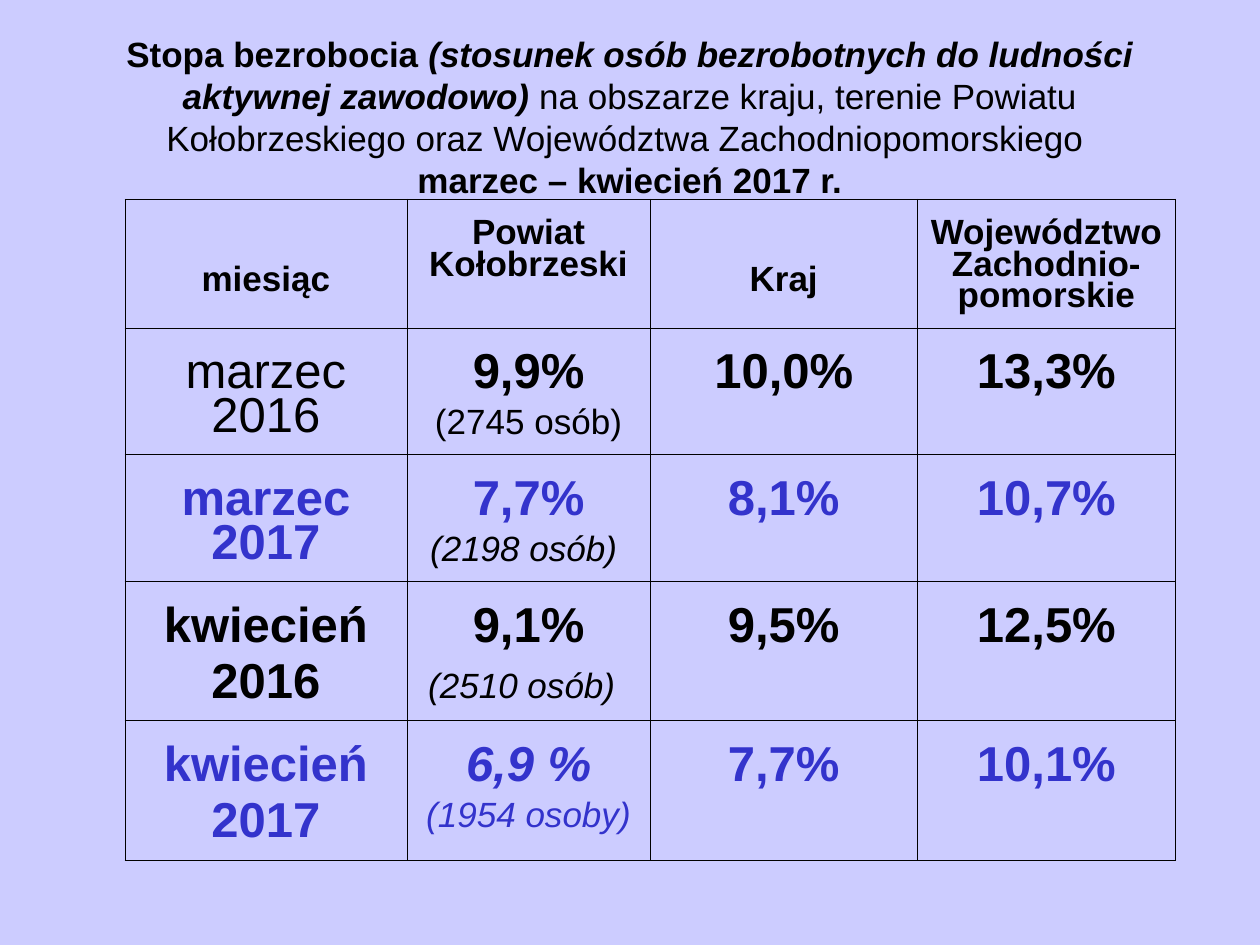
from typing import Any, NamedTuple

from lxml.etree import SubElement
from pptx import Presentation
from pptx.dml.color import RGBColor
from pptx.enum.text import MSO_ANCHOR, PP_ALIGN
from pptx.oxml.ns import qn
from pptx.util import Inches, Pt

BLACK = RGBColor(0x00, 0x00, 0x00)
BLUE = RGBColor(0x33, 0x33, 0xCC)
LILAC = RGBColor(0xCC, 0xCC, 0xFF)
BIG, SMALL = 28, 20
HAIR, EDGE = Pt(0.11), Pt(0.23)
WIDTHS = (2.24, 1.93, 2.12, 2.05)
HEIGHTS = (0.96, 0.96, 0.95, 1.06, 1.05)
BREAK = "\n"


class Run(NamedTuple):
    text: str
    size: int = BIG
    color: RGBColor = BLACK
    bold: bool = True
    italic: bool = False


class Month(NamedTuple):
    name: list[list[Run]]
    local: list[list[Run]]
    nation: str
    region: str
    color: RGBColor


def assign(item: Any, values: dict[str, Any]) -> None:
    for name, value in values.items():
        setattr(item, name, value)


def write(frame: Any, lines: list[list[Run]], form: dict[str, Any]) -> None:
    for index, line in enumerate(lines):
        para = frame.add_paragraph() if index else frame.paragraphs[0]
        assign(para, {"alignment": PP_ALIGN.CENTER, **form})
        for part in line:
            if part.text == BREAK:
                para.add_line_break()
                continue
            run = para.add_run()
            run.text = part.text
            assign(run.font, {"name": "Arial", "size": Pt(part.size),
                              "bold": part.bold, "italic": part.italic})
            run.font.color.rgb = part.color


def border(cell: Any, sides: dict[str, int]) -> None:
    props = cell._tc.get_or_add_tcPr()
    for side, width in sides.items():
        line = SubElement(props, qn(f"a:ln{side}"), w=str(int(width)))
        fill = SubElement(line, qn("a:solidFill"))
        SubElement(fill, qn("a:srgbClr"), val=str(BLACK))


def draw_cell(table: Any, row: int, col: int, lines: list[list[Run]], top: float) -> None:
    cell = table.cell(row, col)
    assign(cell, {"margin_left": Inches(0.1), "margin_right": Inches(0.1),
                  "margin_top": Inches(top), "margin_bottom": Inches(0.05)})
    border(cell, {"L": HAIR if col else EDGE,
                  "R": HAIR if col < len(WIDTHS) - 1 else EDGE,
                  "T": HAIR if row else EDGE, "B": HAIR})
    cell.fill.background()
    write(cell.text_frame, lines,
          {"line_spacing": 0.81, "space_before": Pt(7 if row else 5)})


def draw_title(slide: Any, lines: list[list[Run]]) -> None:
    box = slide.shapes.add_textbox(Inches(0.5), Inches(0.3), Inches(9), Inches(1.25))
    assign(box.text_frame, {"word_wrap": True, "vertical_anchor": MSO_ANCHOR.MIDDLE})
    write(box.text_frame, lines, {})


def draw_table(slide: Any, heads: list[tuple[str, float]], months: list[Month]) -> None:
    frame = slide.shapes.add_table(len(HEIGHTS), len(WIDTHS), Inches(0.99), Inches(1.58),
                                   Inches(sum(WIDTHS)), Inches(sum(HEIGHTS)))
    table = frame.table
    assign(table, {"first_row": False, "horz_banding": False})
    for column, width in zip(table.columns, WIDTHS):
        column.width = Inches(width)
    for row, height in zip(table.rows, HEIGHTS):
        row.height = Inches(height)
    for col, (text, top) in enumerate(heads):
        draw_cell(table, 0, col, [[Run(text, SMALL)]], top)
    for row, month in enumerate(months, 1):
        rates = [[[Run(text, color=month.color)]] for text in (month.nation, month.region)]
        for col, lines in enumerate([month.name, month.local, *rates]):
            draw_cell(table, row, col, lines, 0.2)


TITLE = [[
    Run("Stopa bezrobocia ", SMALL),
    Run("(stosunek osób bezrobotnych do ludności aktywnej zawodowo)", SMALL, italic=True),
    Run(" na obszarze kraju, terenie Powiatu Kołobrzeskiego oraz "
        "Województwa Zachodniopomorskiego ", SMALL, bold=False),
    Run(BREAK),
    Run("marzec – kwiecień 2017 r.", SMALL),
]]
HEADS = [("miesiąc", 0.53), ("Powiat Kołobrzeski", 0.16), ("Kraj", 0.53),
         ("Województwo Zachodnio-pomorskie", 0.16)]
MONTHS = [
    Month([[Run("marzec 2016", bold=False)]],
          [[Run("9,9%")], [Run("(2745 osób)", SMALL, bold=False)]],
          "10,0%", "13,3%", BLACK),
    Month([[Run("marzec 2017", color=BLUE)]],
          [[Run("7,7%", color=BLUE)], [Run("(2198 osób) ", SMALL, BLACK, False, True)]],
          "8,1%", "10,7%", BLUE),
    Month([[Run("kwiecień")], [Run("2016")]],
          [[Run("9,1%")],
           [Run("(2510 osób)", SMALL, BLACK, False, True), Run(" ", bold=False)]],
          "9,5%", "12,5%", BLACK),
    Month([[Run("kwiecień", color=BLUE)], [Run("2017", color=BLUE)]],
          [[Run("6,9 %", color=BLUE, italic=True)],
           [Run("(1954 osoby)", SMALL, BLUE, False, True)]],
          "7,7%", "10,1%", BLUE),
]


def main() -> None:
    deck = Presentation()
    assign(deck, {"slide_width": Inches(10), "slide_height": Inches(7.5)})
    slide = deck.slides.add_slide(deck.slide_layouts[6])
    slide.background.fill.solid()
    slide.background.fill.fore_color.rgb = LILAC
    draw_title(slide, TITLE)
    draw_table(slide, HEADS, MONTHS)
    deck.save("out.pptx")


if __name__ == "__main__":
    main()
